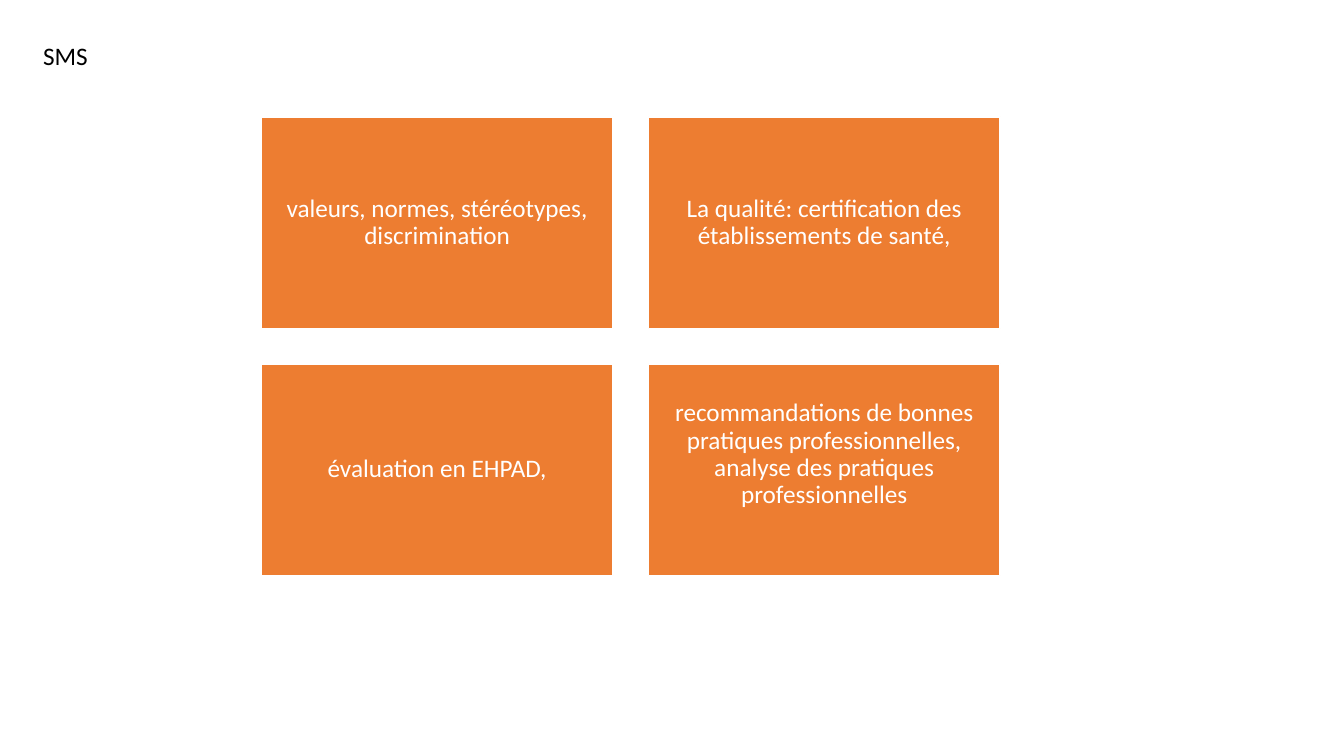
from pptx import Presentation
from pptx.dml.color import RGBColor
from pptx.enum.shapes import MSO_SHAPE
from pptx.enum.text import MSO_ANCHOR, MSO_AUTO_SIZE, PP_ALIGN
from pptx.util import Inches, Pt


def rgb(value):
    return RGBColor.from_string(value)


class SlideBuilder:
    """Hold the style and the current slide, and draw its elements."""

    font = {"name": "Calibri", "size": Pt(18)}
    card_frame = {"word_wrap": True, "vertical_anchor": MSO_ANCHOR.MIDDLE,
                  **{f"margin_{side}": Inches(0.07) for side in ("left", "top", "right", "bottom")}}
    card_paragraph = {"alignment": PP_ALIGN.CENTER, "line_spacing": 0.9, "space_after": Pt(6.3)}
    title_frame = {"word_wrap": True, "auto_size": MSO_AUTO_SIZE.SHAPE_TO_FIT_TEXT}
    fill, white, black = "ED7D31", "FFFFFF", "000000"

    def __init__(self, prs):
        self.s = prs.slides.add_slide(prs.slide_layouts[6])

    def apply(self, target, formats):
        for name, value in formats.items():
            setattr(target, name, value)

    def add_text(self, sp, text, color, frame, paragraph):
        tf = sp.text_frame
        self.apply(tf, frame)
        p = tf.paragraphs[0]
        p.text = text
        self.apply(p, paragraph)
        for r in p.runs:
            self.apply(r.font, self.font)
            r.font.color.rgb = rgb(color)

    def title(self, text, *box):
        sp = self.s.shapes.add_textbox(*map(Inches, box))
        self.add_text(sp, text, self.black, self.title_frame, {})

    def card(self, text, *box):
        sp = self.s.shapes.add_shape(MSO_SHAPE.RECTANGLE, *map(Inches, box))
        sp.shadow.inherit = False
        sp.fill.solid()
        sp.fill.fore_color.rgb = rgb(self.fill)
        sp.line.color.rgb = rgb(self.white)
        sp.line.width = Pt(1)
        self.add_text(sp, text, self.white, self.card_frame, self.card_paragraph)


def main():
    prs = Presentation()
    prs.slide_width, prs.slide_height = Inches(13.33), Inches(7.5)
    builder = SlideBuilder(prs)
    builder.title("SMS", 0.33, 0.35, 3.3, 0.4)

    themes = [
        "valeurs, normes, stéréotypes, discrimination",
        "La qualité: certification des établissements de santé,",
        "évaluation en EHPAD,",
        "recommandations de bonnes pratiques professionnelles, analyse des pratiques professionnelles\v",
    ]
    left, top, width, height, gap = 2.59, 1.16, 3.49, 2.1, 0.35
    for i, theme in enumerate(themes):
        row, col = divmod(i, 2)
        builder.card(theme, left + col * (width + gap), top + row * (height + gap), width, height)

    prs.save("out.pptx")


if __name__ == "__main__":
    main()
